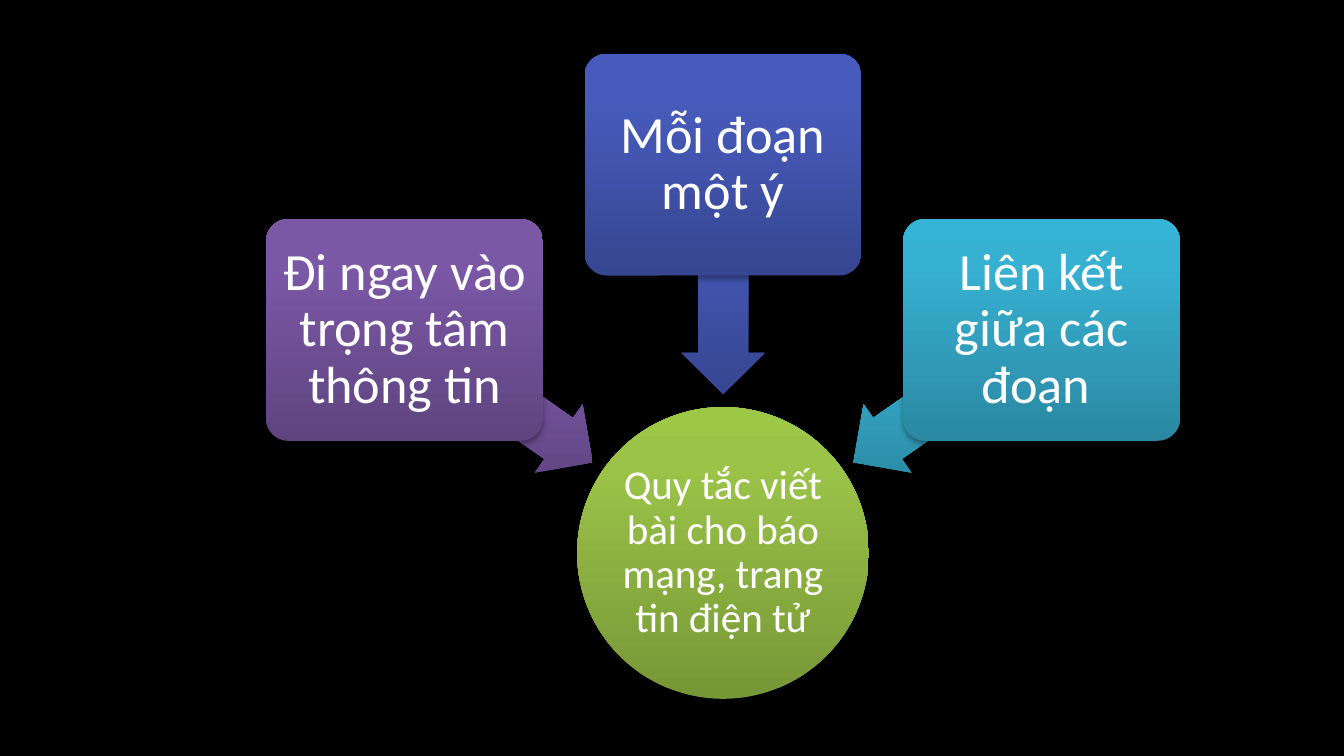
from lxml import etree
from pptx import Presentation
from pptx.dml.color import RGBColor
from pptx.enum.shapes import MSO_SHAPE
from pptx.enum.text import MSO_ANCHOR, PP_ALIGN
from pptx.oxml import parse_xml
from pptx.oxml.ns import nsdecls
from pptx.util import Inches, Pt

ELLIPSE = MSO_SHAPE.OVAL
ROUNDED = MSO_SHAPE.ROUNDED_RECTANGLE
LEFT_ARROW = MSO_SHAPE.LEFT_ARROW
MIDDLE = MSO_ANCHOR.MIDDLE
CENTER = PP_ALIGN.CENTER

BLACK = RGBColor(0x00, 0x00, 0x00)
WHITE = RGBColor(0xFF, 0xFF, 0xFF)
GREEN = (RGBColor(0x77, 0x97, 0x37), RGBColor(0x9B, 0xC3, 0x48), RGBColor(0x9D, 0xC7, 0x46))
PURPLE = (RGBColor(0x5F, 0x44, 0x80), RGBColor(0x7B, 0x58, 0xA6), RGBColor(0x7C, 0x57, 0xA8))
BLUE = (RGBColor(0x37, 0x46, 0x91), RGBColor(0x47, 0x5B, 0xBC), RGBColor(0x45, 0x5A, 0xBF))
TEAL = (RGBColor(0x2A, 0x88, 0xA2), RGBColor(0x37, 0xB1, 0xD2), RGBColor(0x34, 0xB4, 0xD6))

SLIDE_WIDTH = Inches(10)
SLIDE_HEIGHT = SLIDE_WIDTH * 9 // 16
STOP_POSITIONS = (0, 80, 100)
CENTER_X = 5.38
BOX_STEP = 2.37
BOX_WIDTH, BOX_HEIGHT = 2.06, 1.65
ARROW_STEP = 1.67
ARROW_WIDTH, ARROW_HEIGHT = 1.71, 0.62
CIRCLE_SIZE = 2.17
RULES = (
    ("Đi ngay vào trọng tâm thông tin", -1, 1.63, 2.64, 215, PURPLE),
    ("Mỗi đoạn một ý", 0, 0.4, 1.77, 270, BLUE),
    ("Liên kết giữa các đoạn ", 1, 1.63, 2.64, 325, TEAL),
)


def set_gradient(shape, colors):
    """Fill the shape with an upright gradient, starting at its foot."""
    shape.fill.gradient()
    gradient = shape.fill._fill._gradFill
    stops = "".join(
        f'<a:gs pos="{position * 1000}"><a:srgbClr val="{color}"/></a:gs>'
        for position, color in zip(STOP_POSITIONS, colors)
    )
    gradient.getparent().replace(gradient, parse_xml(
        f'<a:gradFill {nsdecls("a")} rotWithShape="0"><a:gsLst>{stops}</a:gsLst>'
        '<a:lin ang="16200000" scaled="0"/></a:gradFill>'
    ))


def set_shadow(shape):
    """Give the shape a soft shadow below it."""
    shape.shadow.inherit = False
    effects = shape._element.spPr.find("{*}effectLst")
    effects.append(etree.fromstring(
        f'<a:outerShdw {nsdecls("a")} blurRad="{Pt(3.1)}" dist="{Pt(1.8)}" '
        'dir="5400000" rotWithShape="0"><a:srgbClr val="000000">'
        '<a:alpha val="35000"/></a:srgbClr></a:outerShdw>'
    ))


def add_figure(slide, kind, center_x, top, width, height, colors, adjustments=()):
    """Add a shaded shape centred on a given abscissa."""
    shape = slide.shapes.add_shape(
        kind, Inches(center_x - width / 2), Inches(top), Inches(width), Inches(height)
    )
    for index, value in enumerate(adjustments):
        shape.adjustments[index] = value
    shape.line.fill.background()
    set_gradient(shape, colors)
    set_shadow(shape)
    return shape


def write_text(shape, text, size, margin):
    """Write centred white text inside the shape."""
    frame = shape.text_frame
    inset = Inches(margin)
    frame_format = {
        "word_wrap": True, "vertical_anchor": MIDDLE, "margin_left": inset,
        "margin_right": inset, "margin_top": inset, "margin_bottom": inset,
    }
    for name, value in frame_format.items():
        setattr(frame, name, value)
    paragraph = frame.paragraphs[0]
    paragraph.alignment = CENTER
    paragraph.line_spacing = 0.9
    run = paragraph.add_run()
    run.text = text
    for name, value in {"name": "Calibri", "size": Pt(size)}.items():
        setattr(run.font, name, value)
    run.font.color.rgb = WHITE


def add_rule(slide, text, column, box_top, arrow_top, rotation, colors):
    """Add a rule box with its arrow towards the circle."""
    arrow = add_figure(
        slide, LEFT_ARROW, CENTER_X + column * ARROW_STEP, arrow_top,
        ARROW_WIDTH, ARROW_HEIGHT, colors, (0.6, 0.5),
    )
    arrow.rotation = rotation
    box = add_figure(
        slide, ROUNDED, CENTER_X + column * BOX_STEP, box_top,
        BOX_WIDTH, BOX_HEIGHT, colors, (0.1,),
    )
    write_text(box, text, 28, 0.06)


def main():
    """Build the slide on writing rules and save it."""
    presentation = Presentation()
    presentation.slide_width = SLIDE_WIDTH
    presentation.slide_height = SLIDE_HEIGHT
    slide = presentation.slides.add_slide(presentation.slide_layouts[6])
    slide.background.fill.solid()
    slide.background.fill.fore_color.rgb = BLACK
    circle = add_figure(slide, ELLIPSE, CENTER_X, 3.03, CIRCLE_SIZE, CIRCLE_SIZE, GREEN)
    write_text(circle, "Quy tắc viết bài cho báo mạng, trang tin điện tử", 22, 0.02)
    for rule in RULES:
        add_rule(slide, *rule)
    presentation.save("out.pptx")


if __name__ == "__main__":
    main()
